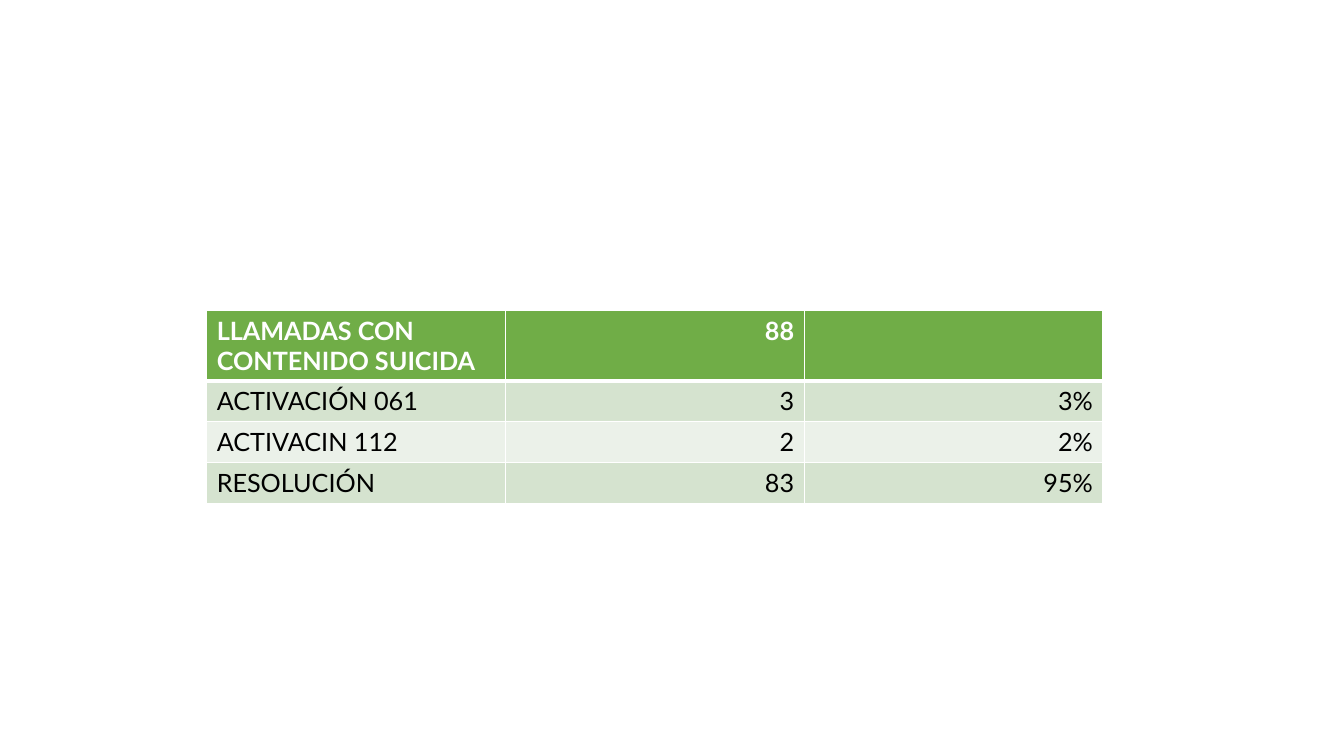
from dataclasses import dataclass

from lxml.etree import SubElement
from pptx import Presentation
from pptx.dml.color import RGBColor
from pptx.enum.text import PP_ALIGN as Align
from pptx.oxml.ns import qn
from pptx.slide import Slide
from pptx.table import _Cell as Cell
from pptx.util import Inches, Pt

WHITE = RGBColor(0xFF, 0xFF, 0xFF)
BLACK = RGBColor(0x00, 0x00, 0x00)
GREEN = RGBColor(0x70, 0xAD, 0x47)
SAGE = RGBColor(0xD5, 0xE3, 0xCF)
MIST = RGBColor(0xEB, 0xF1, 0xE9)

FONT = "Lato"
SIZE = Pt(18)
LEFT, TOP = Inches(2.05), Inches(3.08)
COLUMN, ROW, HEADER = Inches(2.963), Inches(0.405), Inches(0.7)


@dataclass(frozen=True)
class CallRow:
    texts: tuple[str, str, str]
    fill: RGBColor
    color: RGBColor = BLACK
    header: bool = False


ROWS = (
    CallRow(("LLAMADAS CON CONTENIDO SUICIDA", "88", ""), GREEN, WHITE, True),
    CallRow(("ACTIVACIÓN 061", "3", "3%"), SAGE),
    CallRow(("ACTIVACIN 112", "2", "2%"), MIST),
    CallRow(("RESOLUCIÓN", "83", "95%"), SAGE),
)


def add_border(cell: Cell, side: str, width: int) -> None:
    tc_pr = cell._tc.get_or_add_tcPr()
    ln = SubElement(tc_pr, qn(f"a:{side}"), w=str(Pt(width)))
    fill = SubElement(ln, qn("a:solidFill"))
    SubElement(fill, qn("a:srgbClr"), val=str(WHITE))


def format_cell(cell: Cell, text: str, row: CallRow, top: int, right: bool) -> None:
    bottom = 3 if row.header else 1
    for side, width in (("lnL", 1), ("lnR", 1), ("lnT", top), ("lnB", bottom)):
        add_border(cell, side, width)
    cell.fill.solid()
    cell.fill.fore_color.rgb = row.fill
    p = cell.text_frame.paragraphs[0]
    p.alignment = Align.RIGHT if right else Align.LEFT
    if text:
        r = p.add_run()
        r.text = text
        r.font.name = FONT
        r.font.size = SIZE
        r.font.bold = row.header
        r.font.color.rgb = row.color


def add_calls_table(s: Slide) -> None:
    columns = len(ROWS[0].texts)
    height = HEADER + ROW * (len(ROWS) - 1)
    table = s.shapes.add_table(
        len(ROWS), columns, LEFT, TOP, COLUMN * columns, height
    ).table
    for column in table.columns:
        column.width = COLUMN
    for i, row in enumerate(ROWS):
        table.rows[i].height = HEADER if row.header else ROW
        top = 3 if i and ROWS[i - 1].header else 1
        for j, text in enumerate(row.texts):
            format_cell(table.cell(i, j), text, row, top, j > 0)


def main() -> None:
    prs = Presentation()
    prs.slide_width, prs.slide_height = Inches(13.33), Inches(7.5)
    s = prs.slides.add_slide(prs.slide_layouts[6])
    add_calls_table(s)
    prs.save("out.pptx")


if __name__ == "__main__":
    main()
